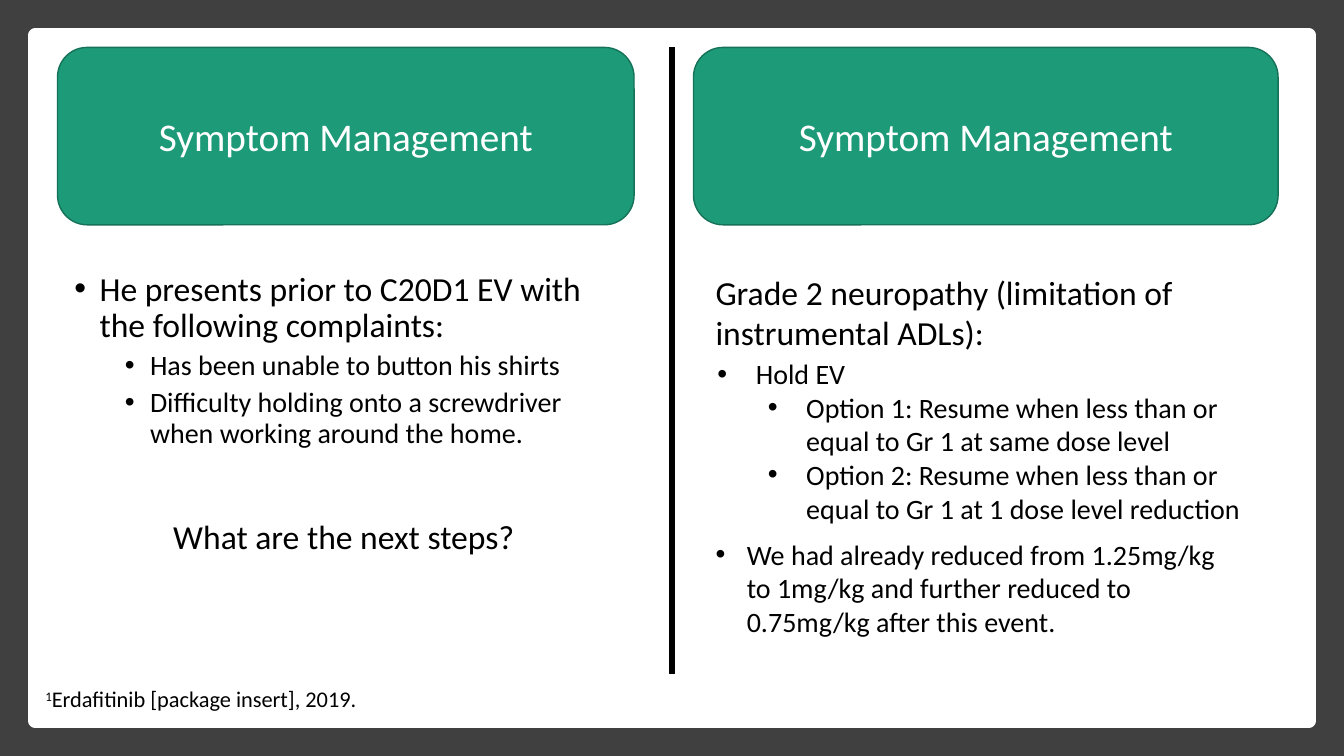
import pptx
import pptx.dml.color
import pptx.enum.shapes
import pptx.enum.text
import pptx.oxml.ns
import pptx.util
import lxml.etree

RGB = pptx.dml.color.RGBColor
DARK = RGB(0x40, 0x40, 0x40)
WHITE = RGB(0xFF, 0xFF, 0xFF)
BLACK = RGB(0, 0, 0)
GREEN = RGB(0x1D, 0x9A, 0x78)
EDGE = RGB(0x15, 0x72, 0x59)
SHAPE = pptx.enum.shapes.MSO_SHAPE
ALIGN = pptx.enum.text.PP_ALIGN
ANCHOR = pptx.enum.text.MSO_ANCHOR


class Deck:
    """Draws styled parts on one slide, placed by percent of its width and height."""

    font = "Calibri"

    def __init__(self):
        self.show = pptx.Presentation()
        self.show.slide_width = pptx.util.Inches(13.33)
        self.show.slide_height = pptx.util.Inches(7.5)
        self.slide = self.show.slides.add_slide(self.show.slide_layouts[6])

    def place(self, *spots):
        sides = (self.show.slide_width, self.show.slide_height)
        return [int(spot * sides[i % 2] / 100) for i, spot in enumerate(spots)]

    def add_text(self, para, text, size, color=BLACK, raised=False):
        run = para.add_run()
        run.text = text
        run.font.name = self.font
        run.font.size = pptx.util.Pt(size)
        run.font.color.rgb = color
        if raised:
            run._r.get_or_add_rPr().set("baseline", "30000")

    def block(self, kind, spot, fill, edge=None, width=1):
        shape = self.slide.shapes.add_shape(kind, *self.place(*spot))
        shape.shadow.inherit = False
        shape.fill.solid()
        shape.fill.fore_color.rgb = fill
        if edge is None:
            shape.line.fill.background()
        else:
            shape.line.color.rgb = edge
            shape.line.width = pptx.util.Pt(width)
        return shape

    def card(self, spot, text):
        frame = self.block(SHAPE.ROUNDED_RECTANGLE, spot, GREEN, EDGE).text_frame
        frame.word_wrap = True
        frame.vertical_anchor = ANCHOR.MIDDLE
        para = frame.paragraphs[0]
        para.alignment = ALIGN.CENTER
        self.add_text(para, text, 28, WHITE)

    def rule(self, spot, width):
        line = self.slide.shapes.add_connector(
            pptx.enum.shapes.MSO_CONNECTOR.STRAIGHT, *self.place(*spot))
        line.line.color.rgb = BLACK
        line.line.width = pptx.util.Pt(width)
        lxml.etree.SubElement(line._element.spPr, pptx.oxml.ns.qn("a:effectLst"))

    def box(self, spot, wrap=True):
        frame = self.slide.shapes.add_textbox(*self.place(*spot)).text_frame
        frame.word_wrap = wrap
        return frame

    def note(self, spot, runs, size, wrap=True):
        para = self.box(spot, wrap).paragraphs[0]
        for text, raised in runs:
            self.add_text(para, text, size, raised=raised)

    def points(self, spot, items, hang, lines=1.0, gap=0):
        frame = self.box(spot)
        for i, (level, text, size) in enumerate(items):
            para = frame.paragraphs[0] if i == 0 else frame.add_paragraph()
            para.level = level
            para.line_spacing = lines
            if i:
                para.space_before = pptx.util.Pt(gap)
            props = para._p.get_or_add_pPr()
            props.set("marL", str(int(pptx.util.Inches(hang + level / 2))))
            props.set("indent", str(-int(pptx.util.Inches(hang))))
            for tag, key, value in (("buFont", "typeface", "Arial"), ("buChar", "char", "•")):
                lxml.etree.SubElement(props, pptx.oxml.ns.qn("a:" + tag)).set(key, value)
            self.add_text(para, text, size)


def main():
    deck = Deck()
    deck.block(SHAPE.RECTANGLE, (0, 0, 100, 100), DARK)
    deck.block(SHAPE.RECTANGLE, (2.63, 4.67, 94.75, 90.67), WHITE, WHITE, 10)
    for left, width in ((4.28, 42.9), (51.6, 43.5)):
        deck.card((left, 6.27, width, 23.47), "Symptom Management")
    deck.rule((50, 6.27, 50, 89.2), 4.25)

    deck.points((4.8, 35.33, 42.4, 30.13), [
        (0, "He presents prior to C20D1 EV with the following complaints:", 24),
        (1, "Has been unable to button his shirts", 20),
        (1, "Difficulty holding onto a screwdriver when working around the home.", 20),
    ], hang=0.25, lines=0.9, gap=5)
    deck.note((12.15, 67.6, 27.15, 6.67), [("What are the next steps?", False)], 24, wrap=False)

    deck.note((52.5, 35.33, 41.8, 12.13),
              [("Grade 2 neuropathy (limitation of instrumental ADLs):", False)], 24)
    deck.points((52.65, 46.53, 43.5, 27.87), [
        (0, "Hold EV", 20),
        (1, "Option 1: Resume when less than or equal to Gr 1 at same dose level", 20),
        (1, "Option 2: Resume when less than or equal to Gr 1 at 1 dose level reduction", 20),
    ], hang=0.38)
    deck.points((52.5, 70.4, 39.9, 18.8), [
        (0, "We had already reduced from 1.25mg/kg to 1mg/kg and further reduced to "
            "0.75mg/kg after this event.", 20),
    ], hang=0.31)

    deck.note((2.63, 90, 25.05, 4.93),
              [("1", True), ("Erdafitinib [package insert], 2019.", False)], 16, wrap=False)
    deck.show.save("out.pptx")


if __name__ == "__main__":
    main()
